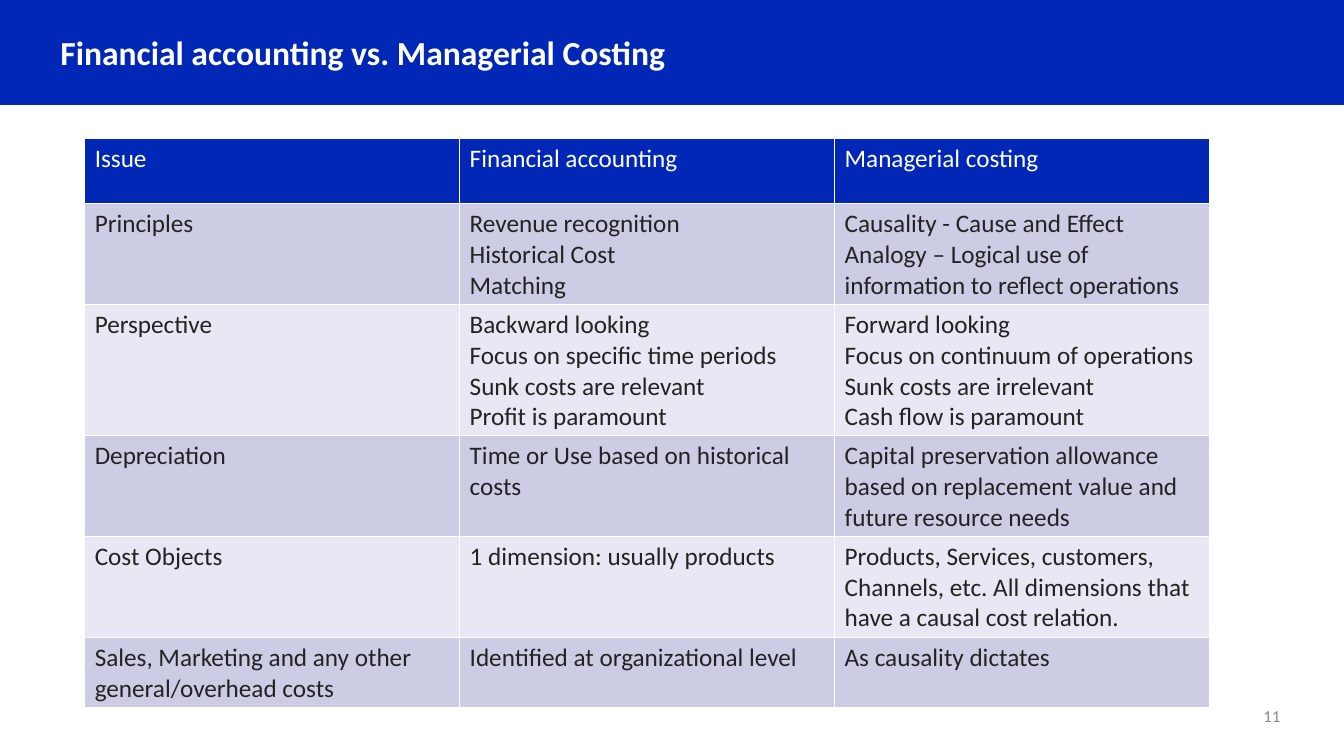
from dataclasses import dataclass

from lxml import etree
from pptx import Presentation
from pptx import util as u
from pptx.dml.color import RGBColor
from pptx.enum import shapes, text
from pptx.oxml import ns


@dataclass(frozen=True)
class Theme:
    font: str = "Calibri"
    blue: str = "0027B6"
    white: str = "FFFFFF"
    ink: str = "222322"
    grey: str = "8C8C8C"
    bands: tuple[str, str] = ("CCCDE5", "E7E8F3")
    title_size: float = 24
    table_size: float = 18
    number_size: float = 12
    border: float = 1


@dataclass(frozen=True)
class Box:
    """A place on the grid, in columns and rows."""
    col: float
    row: float
    cols: float
    rows: float

    def place(self) -> tuple[int, int, int, int]:
        return (int(self.col * COL), int(self.row * ROW),
                int(self.cols * COL), int(self.rows * ROW))


@dataclass(frozen=True)
class Issue:
    name: str
    financial: str
    managerial: str


THEME = Theme()
WIDTH, HEIGHT = u.Inches(13.33), u.Inches(7.5)
COL, ROW = WIDTH / 160, HEIGHT / 150

BAND = Box(-0.12, -0.2, 160.24, 21)
TITLE = Box(6, 1, 138, 19.6)
TABLE = Box(10.08, 27.4, 133.92, 78)
NUMBER = Box(117.6, 139, 36, 8)

ISSUES = [
    Issue("Issue", "Financial accounting", "Managerial costing"),
    Issue("Principles",
          "Revenue recognition\nHistorical Cost\nMatching",
          "Causality - Cause and Effect\n"
          "Analogy – Logical use of information to reflect operations"),
    Issue("Perspective",
          "Backward looking\nFocus on specific time periods\n"
          "Sunk costs are relevant\nProfit is paramount",
          "Forward looking\nFocus on continuum of operations\n"
          "Sunk costs are irrelevant\nCash flow is paramount"),
    Issue("Depreciation",
          "Time or Use based on historical costs",
          "Capital preservation allowance based on replacement value "
          "and future resource needs"),
    Issue("Cost Objects",
          "1 dimension: usually products",
          "Products, Services, customers, Channels, etc. "
          "All dimensions that have a causal cost relation."),
    Issue("Sales, Marketing and any other general/overhead costs",
          "Identified at organizational level",
          "As causality dictates"),
]


def write(tf, content: str, size: float, color: str, bold: bool = False,
          align=text.PP_ALIGN.LEFT) -> None:
    tf.text = content
    tf.word_wrap = True
    for p in tf.paragraphs:
        p.alignment = align
        for r in p.runs:
            r.font.name = THEME.font
            r.font.size = u.Pt(size)
            r.font.bold = bold
            r.font.color.rgb = RGBColor.from_string(color)


def paint(fill, color: str) -> None:
    fill.solid()
    fill.fore_color.rgb = RGBColor.from_string(color)


def outline(cell) -> None:
    """Draw the four borders, which come before the cell's fill."""
    props = cell._tc.get_or_add_tcPr()
    for i, side in enumerate(("lnL", "lnR", "lnT", "lnB")):
        line = etree.Element(ns.qn(f"a:{side}"), w=str(u.Pt(THEME.border)))
        fill = etree.SubElement(line, ns.qn("a:solidFill"))
        etree.SubElement(fill, ns.qn("a:srgbClr"), val=THEME.white)
        props.insert(i, line)


def add_band(s) -> None:
    band = s.shapes.add_shape(shapes.MSO_SHAPE.RECTANGLE, *BAND.place())
    band.shadow.inherit = False
    paint(band.fill, THEME.blue)
    band.line.fill.background()
    s.shapes.element.insert(2, band.element)  # behind the title


def add_title(s) -> None:
    sp = s.shapes.title
    sp.left, sp.top, sp.width, sp.height = TITLE.place()
    tf = sp.text_frame
    write(tf, "Financial accounting vs. Managerial Costing",
          THEME.title_size, THEME.white, bold=True)
    tf.auto_size = text.MSO_AUTO_SIZE.NONE
    tf.vertical_anchor = text.MSO_ANCHOR.MIDDLE
    tf.paragraphs[0].line_spacing = 0.9


def add_number(s) -> None:
    sp = s.shapes.add_textbox(*NUMBER.place())
    write(sp.text_frame, "11", THEME.number_size, THEME.grey,
          align=text.PP_ALIGN.RIGHT)


def add_issues(s, issues: list[Issue]) -> None:
    table = s.shapes.add_table(len(issues), 3, *TABLE.place()).table
    for i, issue in enumerate(issues):
        header = i == 0
        fill = THEME.blue if header else THEME.bands[(i - 1) % 2]
        color = THEME.white if header else THEME.ink
        for j, content in enumerate((issue.name, issue.financial,
                                     issue.managerial)):
            cell = table.cell(i, j)
            write(cell.text_frame, content, THEME.table_size, color)
            paint(cell.fill, fill)
            outline(cell)


def main() -> None:
    prs = Presentation()
    prs.slide_width, prs.slide_height = WIDTH, HEIGHT
    s = prs.slides.add_slide(prs.slide_layouts.get_by_name("Title Only"))

    # Header
    add_band(s)
    add_title(s)

    # Slide number and comparison table
    add_number(s)
    add_issues(s, ISSUES)

    prs.save("out.pptx")


if __name__ == "__main__":
    main()
